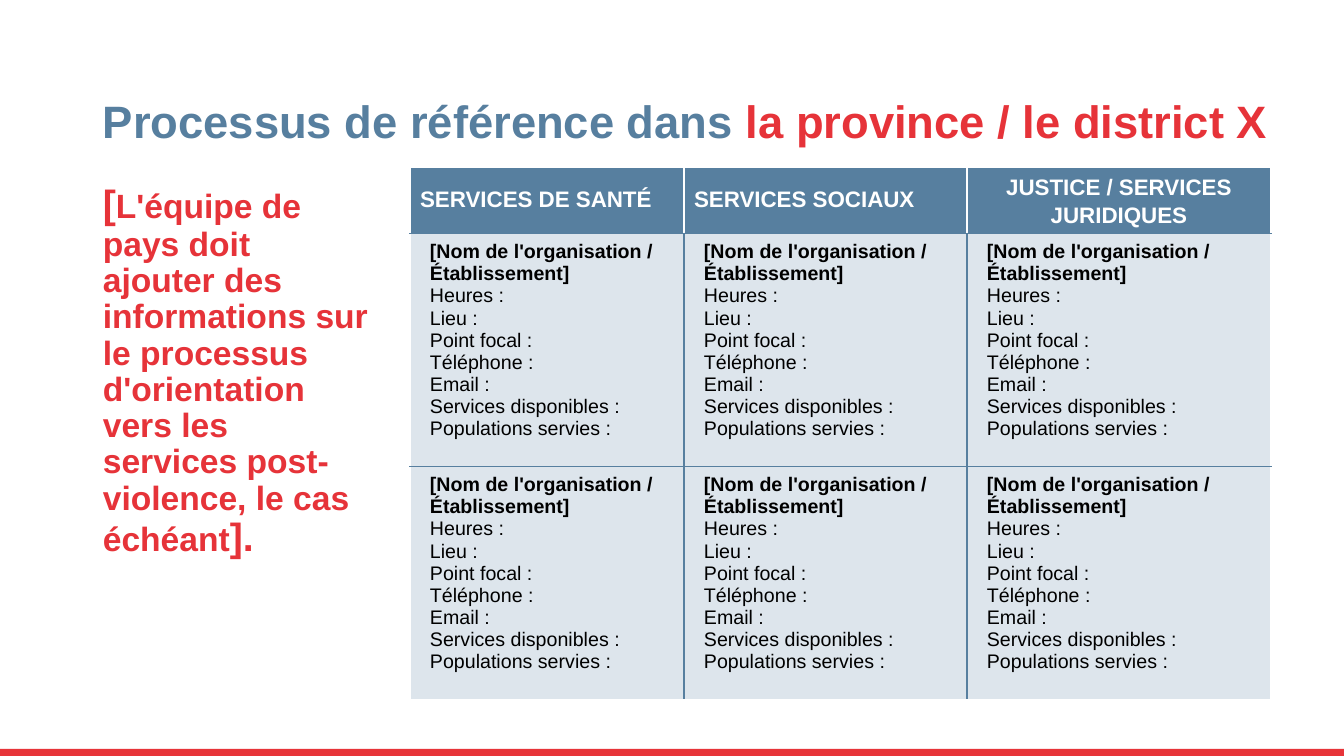
from pptx import Presentation
from pptx.dml.color import RGBColor
from pptx.enum.shapes import MSO_SHAPE
from pptx.enum.text import MSO_ANCHOR, PP_ALIGN
from pptx.oxml import parse_xml
from pptx.oxml.ns import nsdecls
from pptx.util import Pt

BLUE, RED, PALE = "577F9F", "E63339", "DDE5EC"
WHITE, BLACK = "FFFFFF", "000000"


def px(n):
    return round(n * 12192000 / 1344)


def tint(code):
    return RGBColor.from_string(code)


class Deck:
    def __init__(self, face):
        self.face = face
        self.deck = Presentation()
        self.deck.slide_width, self.deck.slide_height = px(1344), px(756)
        self.slide = self.deck.slides.add_slide(self.deck.slide_layouts[6])

    def style(self, run, size, color, bold):
        font = run.font
        font.name, font.size, font.bold = self.face, Pt(size), bold
        font.color.rgb = tint(color)

    def bar(self, x, y, w, h, color):
        bar = self.slide.shapes.add_shape(MSO_SHAPE.RECTANGLE, px(x), px(y), px(w), px(h))
        bar.shadow.inherit = False
        bar.fill.solid()
        bar.fill.fore_color.rgb = tint(color)
        bar.line.fill.background()

    def text(self, x, y, w, h, parts, anchor=MSO_ANCHOR.TOP):
        box = self.slide.shapes.add_textbox(px(x), px(y), px(w), px(h))
        frame = box.text_frame
        frame.word_wrap = True
        frame.vertical_anchor = anchor
        para = frame.paragraphs[0]
        para.line_spacing = 0.9
        for words, size, color in parts:
            run = para.add_run()
            run.text = words
            self.style(run, size, color, True)

    def edge(self, cell, side, color):
        cell._tc.get_or_add_tcPr().append(parse_xml(
            f'<a:ln{side} {nsdecls("a")} w="12700"><a:solidFill>'
            f'<a:srgbClr val="{color}"/></a:solidFill></a:ln{side}>'))

    def cell(self, cell, lines, size, color, fill, edges):
        for side, hue in zip("LRTB", edges):
            self.edge(cell, side, hue)
        cell.fill.solid()
        cell.fill.fore_color.rgb = tint(fill)
        cell.text_frame.text = "\n".join(lines)
        for i, para in enumerate(cell.text_frame.paragraphs):
            self.style(para.runs[0], size, color, i == 0)

    def table(self, x, y, cols, rows, heads, lines):
        grid = self.slide.shapes.add_table(
            len(rows), len(cols), px(x), px(y), px(sum(cols)), px(sum(rows))).table
        grid.horz_banding = False
        for col, w in zip(grid.columns, cols):
            col.width = px(w)
        for row, h in zip(grid.rows, rows):
            row.height = px(h)
        for c, head in enumerate(heads):
            cell = grid.cell(0, c)
            self.cell(cell, [head], 16, WHITE, BLUE, [WHITE, WHITE, WHITE, BLUE])
            cell.vertical_anchor = MSO_ANCHOR.MIDDLE
            for r in range(1, len(rows)):
                cell = grid.cell(r, c)
                left = BLUE if c else WHITE
                right = BLUE if c < len(cols) - 1 else WHITE
                base = BLUE if r < len(rows) - 1 else WHITE
                self.cell(cell, lines, 14, BLACK, PALE, [left, right, BLUE, base])
                cell.margin_left, cell.margin_right = px(20), px(10)
                cell.margin_top = cell.margin_bottom = px(8)
        return grid


def main():
    deck = Deck("Arial")
    deck.bar(0, 749, 1344, 7, "E73439")
    deck.text(93, 65, 1204, 88, [
        ("Processus de référence dans ", 32.4, BLUE),
        ("la province / le district X", 32.4, RED),
    ], MSO_ANCHOR.BOTTOM)
    deck.text(93, 180, 285, 507, [
        ("[", 28, RED),
        ("L'équipe de pays doit ajouter des informations sur le processus "
         "d'orientation vers les services post-violence, le cas échéant", 24, RED),
        ("].", 28, RED),
    ])
    grid = deck.table(
        410, 167, [274, 283, 304], [66, 233, 233],
        ["SERVICES DE SANTÉ", "SERVICES SOCIAUX", "JUSTICE / SERVICES JURIDIQUES"],
        ["[Nom de l'organisation / Établissement]", "Heures :", "Lieu :",
         "Point focal :", "Téléphone :", "Email :", "Services disponibles :",
         "Populations servies :"])
    law = grid.cell(0, 2).text_frame.paragraphs[0]
    law.alignment = PP_ALIGN.CENTER
    law.line_spacing = Pt(20)
    deck.deck.save("out.pptx")


if __name__ == "__main__":
    main()
